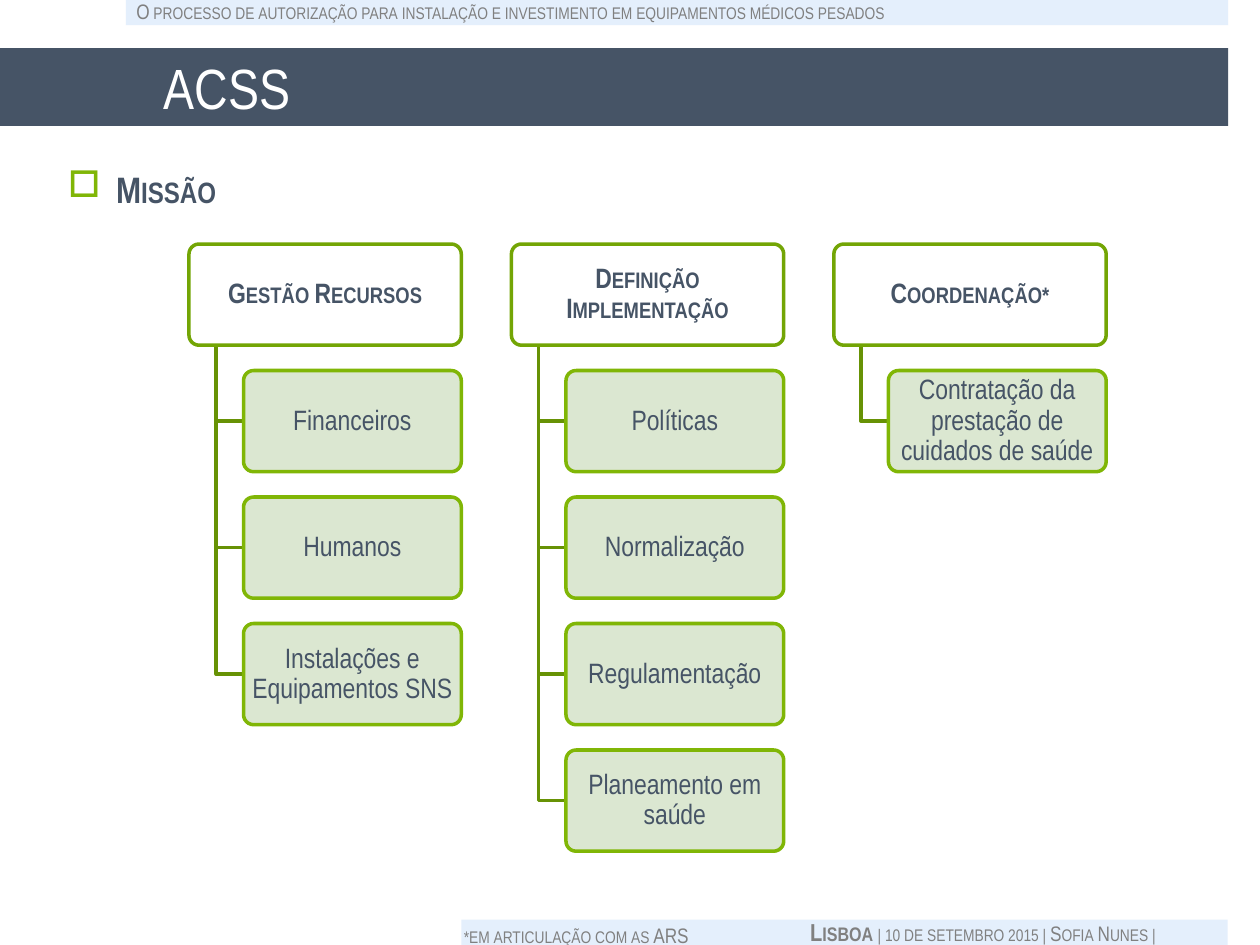
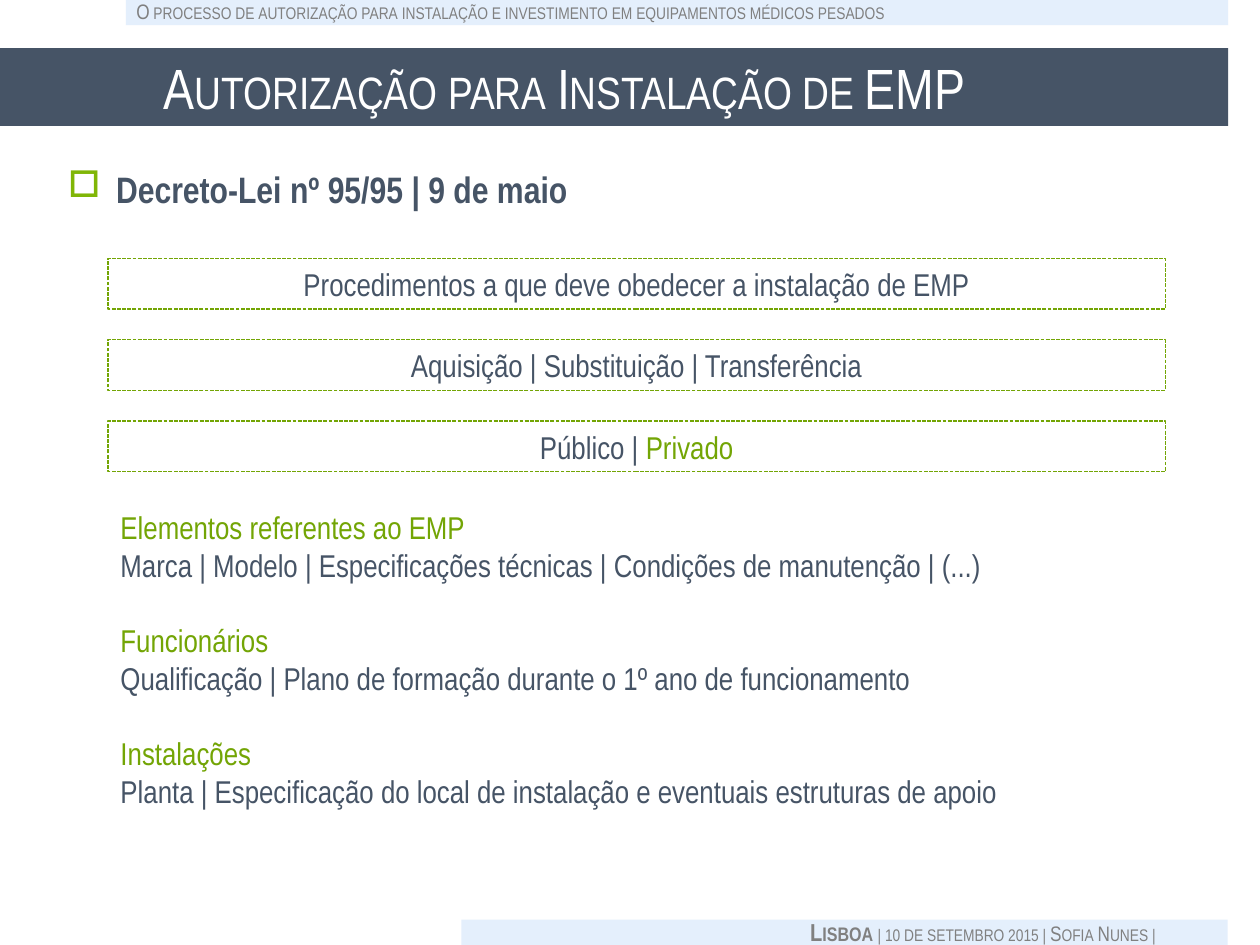
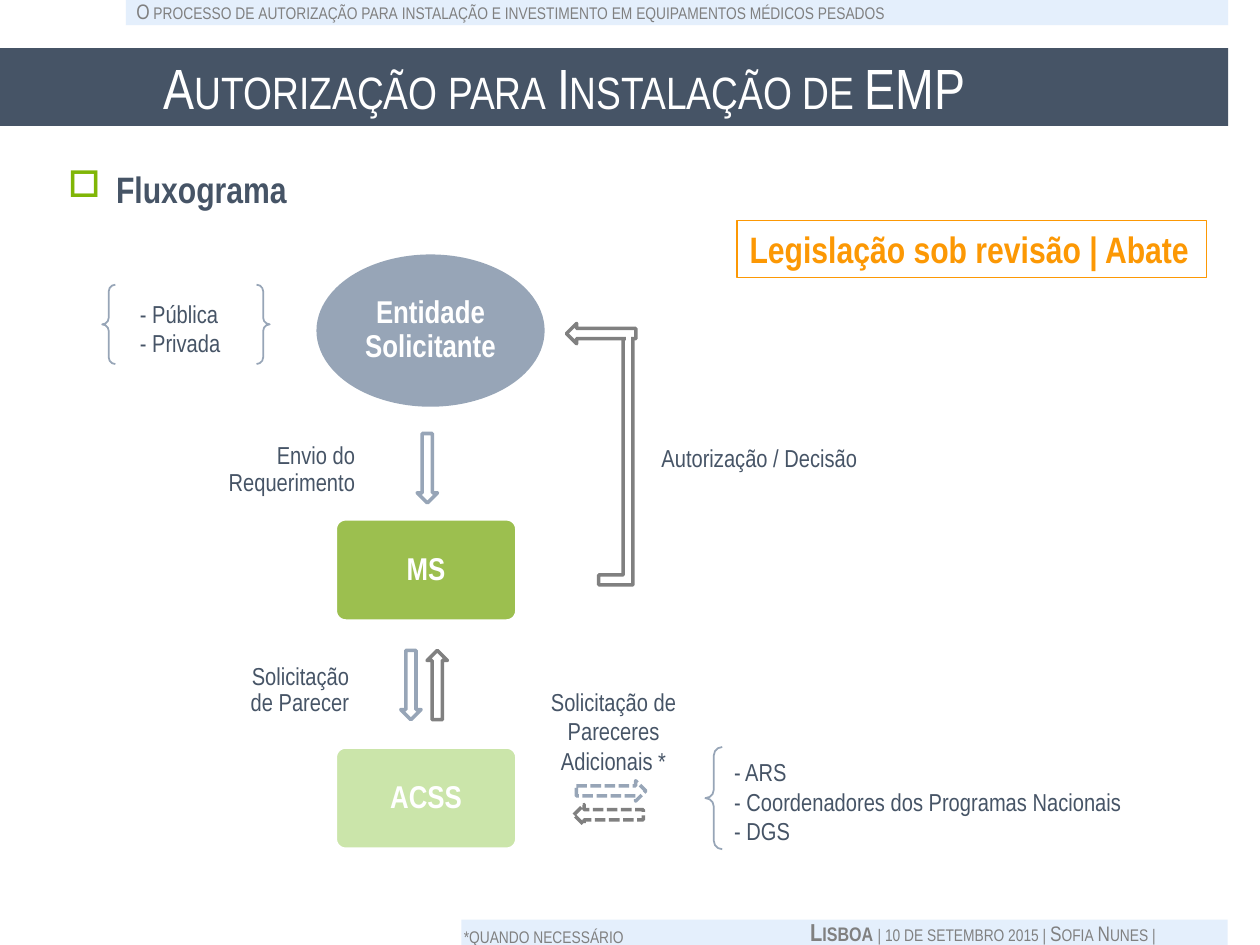
from dataclasses import dataclass

from lxml.etree import SubElement
from pptx import Presentation
from pptx.dml.color import RGBColor
from pptx.enum.dml import MSO_LINE
from pptx.enum.shapes import MSO_CONNECTOR, MSO_SHAPE
from pptx.enum.text import MSO_ANCHOR, PP_ALIGN
from pptx.oxml.ns import qn
from pptx.util import Cm, Pt


@dataclass(frozen=True)
class Theme:
    font: str = "Arial Narrow"
    white: str = "FFFFFF"
    slate: str = "465466"
    gray: str = "808080"
    steel: str = "97A5B7"
    pale_blue: str = "E4EFFC"
    green: str = "73A505"
    bullet_green: str = "80B606"
    trunk_green: str = "679205"
    pale_green: str = "D8E5CC"
    light_green: str = "B6DA86"
    orange: str = "FC9804"
    title: float = 32.4
    heading: float = 21
    body: float = 18
    node: float = 16
    label: float = 14
    note: float = 12


THEME = Theme()
TEXT_INSETS = (0.25, 0.13, 0.25, 0.13)
NODE_INSETS = (0.08, 0.05, 0.08, 0.05)
ARROW_LENGTH, ARROW_WIDTH = 1.4, 0.41


@dataclass(frozen=True)
class Span:
    text: str
    size: float = THEME.label
    color: str = THEME.slate
    bold: bool = False
    small_caps: bool = False


def rgb(color):
    return RGBColor.from_string(color)


def frame(at):
    return [Cm(length) for length in at]


def paint(shape, fill=None, line=None, width=2, alpha=None, dashed=False):
    shape.shadow.inherit = False
    if fill:
        shape.fill.solid()
        shape.fill.fore_color.rgb = rgb(fill)
        if alpha:
            color = shape.fill._xPr.find(qn("a:solidFill"))[0]
            SubElement(color, qn("a:alpha"), val=str(alpha * 1000))
    else:
        shape.fill.background()
    if line:
        shape.line.color.rgb = rgb(line)
        shape.line.width = Pt(width)
        if dashed:
            shape.line.dash_style = MSO_LINE.SQUARE_DOT
    else:
        shape.line.fill.background()


def add_shape(page, kind, at, corner=None, **style):
    shape = page.shapes.add_shape(kind, *frame(at))
    if corner is not None:
        shape.adjustments[0] = corner
    paint(shape, **style)
    return shape


def write(box, paragraphs, align=PP_ALIGN.LEFT, anchor=MSO_ANCHOR.TOP,
          insets=TEXT_INSETS, spacing=None, wrap=True):
    text = box.text_frame
    text.word_wrap = wrap
    text.vertical_anchor = anchor
    text.margin_left, text.margin_top, text.margin_right, text.margin_bottom = frame(insets)
    for index, spans in enumerate(paragraphs):
        para = text.add_paragraph() if index else text.paragraphs[0]
        para.alignment = align
        if spacing:
            para.line_spacing = spacing
        for span in spans:
            run = para.add_run()
            run.text = span.text
            run.font.name = THEME.font
            run.font.size = Pt(span.size)
            run.font.bold = span.bold
            run.font.color.rgb = rgb(span.color)
            if span.small_caps:
                run.font._element.set("cap", "small")
    return text


def add_text(page, at, paragraphs, **layout):
    return write(page.shapes.add_textbox(*frame(at)), paragraphs, **layout)


def add_centered(page, kind, at, spans, corner=None, insets=NODE_INSETS, spacing=0.9, **style):
    shape = add_shape(page, kind, at, corner, **style)
    write(shape, [spans], PP_ALIGN.CENTER, MSO_ANCHOR.MIDDLE, insets, spacing)


def add_heading(page, heading, small_caps=False):
    span = Span(heading, THEME.heading, bold=True, small_caps=small_caps)
    text = add_text(page, (1.12, 3.23, 15.7, 9), [[span]])
    properties = text.paragraphs[0]._p.get_or_add_pPr()
    properties.set("marL", str(Cm(0.97)))
    properties.set("indent", str(-Cm(0.97)))
    color = SubElement(properties, qn("a:buClr"))
    SubElement(color, qn("a:srgbClr"), val=THEME.bullet_green)
    SubElement(properties, qn("a:buChar"), char="□")


def add_footnote(page, note):
    add_text(page, (9.1, 18.47, 8.38, 0.74),
             [[Span(note, THEME.note, THEME.gray, small_caps=True)]])


def add_page(deck, title, heading, small_caps=False):
    page = deck.slides.add_slide(deck.slide_layouts[6])
    for band in ((2.54, 0, 22.22, 0.51), (9.3, 18.54, 15.45, 0.51)):
        add_shape(page, MSO_SHAPE.RECTANGLE, band, fill=THEME.pale_blue)
    add_text(page, (13.72, 18.36, 12.19, 0.86), [[
        Span("Lisboa ", THEME.label, THEME.gray, True, True),
        Span("| 10 de setembro 2015 | Sofia Nunes |", THEME.note, THEME.gray, small_caps=True),
    ]], align=PP_ALIGN.CENTER)
    add_text(page, (2.34, -0.15, 15.9, 0.76), [[
        Span("O processo de autorização para instalação e investimento em "
             "equipamentos médicos pesados", THEME.note, THEME.gray, small_caps=True),
    ]], align=PP_ALIGN.CENTER, wrap=False)
    title_bar = add_shape(page, MSO_SHAPE.RECTANGLE, (0, 0.97, 24.76, 1.57), fill=THEME.slate)
    write(title_bar, [[Span(title, THEME.title, THEME.white, small_caps=True)]],
          anchor=MSO_ANCHOR.MIDDLE, insets=(3.3, 0.13, 0.76, 0.13))
    add_heading(page, heading, small_caps)
    return page


def add_elbow(page, left, top, right, bottom):
    builder = page.shapes.build_freeform(Cm(left), Cm(top), scale=1.0)
    builder.add_line_segments([(Cm(left), Cm(bottom)), (Cm(right), Cm(bottom))], close=False)
    paint(builder.convert_to_shape(), line=THEME.trunk_green)


def add_branch(page, left, head, children):
    top, height, pitch = 4.92, 2.04, 2.55
    child_left = left + 1.1
    for row, child in enumerate(children, start=1):
        child_top = top + row * pitch
        add_elbow(page, left + 0.55, top + height, child_left, child_top + height / 2)
        add_centered(page, MSO_SHAPE.ROUNDED_RECTANGLE, (child_left, child_top, 4.39, height),
                     [Span(child, THEME.node)], 0.1,
                     fill=THEME.pale_green, alpha=90, line=THEME.bullet_green)
    add_centered(page, MSO_SHAPE.ROUNDED_RECTANGLE, (left, top, 5.49, height),
                 [Span(head, THEME.node, bold=True, small_caps=True)], 0.1,
                 fill=THEME.white, line=THEME.green)


def add_arrow(page, kind, left, top, color, dashed=False):
    size = (ARROW_WIDTH, ARROW_LENGTH)
    if kind in (MSO_SHAPE.LEFT_ARROW, MSO_SHAPE.RIGHT_ARROW):
        size = size[::-1]
    add_shape(page, kind, (left, top, *size), fill=THEME.white, line=color, dashed=dashed)


def add_line(page, start, end, color, width):
    line = page.shapes.add_connector(MSO_CONNECTOR.STRAIGHT, *frame(start + end))
    line.line.color.rgb = rgb(color)
    line.line.width = Pt(width)
    SubElement(line._element.spPr, qn("a:effectLst"))


def build_mission(deck):
    page = add_page(deck, "ACSS", "Missão", small_caps=True)
    branches = (
        ("Gestão Recursos", ("Financeiros", "Humanos", "Instalações e Equipamentos SNS")),
        ("Definição Implementação",
         ("Políticas", "Normalização", "Regulamentação", "Planeamento em saúde")),
        ("Coordenação*", ("Contratação da prestação de cuidados de saúde",)),
    )
    for column, (head, children) in enumerate(branches):
        add_branch(page, 3.81 + column * 6.5, head, children)
    add_footnote(page, "*em articulação com as ARS")


def build_decree(deck):
    page = add_page(deck, "Autorização para Instalação de EMP",
                    "Decreto-Lei nº 95/95 | 9 de maio")
    scopes = (
        [Span("Procedimentos a que deve obedecer a instalação de EMP", THEME.body)],
        [Span("Aquisição | Substituição | Transferência", THEME.body)],
        [Span("Público | ", THEME.body), Span("Privado", THEME.body, THEME.green)],
    )
    for row, spans in enumerate(scopes):
        add_centered(page, MSO_SHAPE.RECTANGLE, (2.18, 5.21 + row * 1.64, 21.31, 1.02), spans,
                     insets=TEXT_INSETS, spacing=None,
                     line=THEME.green, width=0.75, dashed=True)
    requirements = (
        ("Elementos referentes ao EMP",
         "Marca | Modelo | Especificações técnicas | Condições de manutenção | (...)"),
        ("Funcionários", "Qualificação | Plano de formação durante o 1º ano de funcionamento"),
        ("Instalações",
         "Planta | Especificação do local de instalação e eventuais estruturas de apoio"),
    )
    paragraphs = []
    for topic, details in requirements:
        paragraphs += [[Span(topic, THEME.body, THEME.green)], [Span(details, THEME.body)]]
    text = add_text(page, (2.18, 10.11, 19.91, 7.19), paragraphs)
    for para in text.paragraphs[2::2]:
        para.space_before = Pt(21.5)


def build_flowchart(deck):
    page = add_page(deck, "Autorização para Instalação de EMP", "Fluxograma")

    add_centered(page, MSO_SHAPE.OVAL, (6.38, 5.13, 4.6, 3.07),
                 [Span("Entidade Solicitante", THEME.body, THEME.white, True)],
                 fill=THEME.steel)
    for name, top, fill in (("MS", 10.46, THEME.green), ("ACSS", 15.06, THEME.light_green)):
        add_centered(page, MSO_SHAPE.ROUNDED_RECTANGLE, (6.76, top, 3.66, 2.06),
                     [Span(name, THEME.body, THEME.white, True)], 0.1,
                     fill=fill, alpha=70, line=THEME.white)

    add_shape(page, MSO_SHAPE.BENT_UP_ARROW, (12.07, 6.58, 0.79, 5.21),
              fill=THEME.white, line=THEME.gray)
    add_shape(page, MSO_SHAPE.RECTANGLE, (12.12, 5.99, 0.91, 0.84),
              fill=THEME.white, line=THEME.white)
    arrows = (
        (MSO_SHAPE.DOWN_ARROW, 8.41, 8.74, THEME.steel, False),
        (MSO_SHAPE.DOWN_ARROW, 8.08, 13.11, THEME.steel, False),
        (MSO_SHAPE.UP_ARROW, 8.61, 13.11, THEME.gray, False),
        (MSO_SHAPE.RIGHT_ARROW, 11.62, 15.74, THEME.steel, True),
        (MSO_SHAPE.LEFT_ARROW, 11.57, 16.22, THEME.gray, True),
        (MSO_SHAPE.LEFT_ARROW, 11.42, 6.52, THEME.gray, False),
    )
    for arrow in arrows:
        add_arrow(page, *arrow)
    add_line(page, (12.67, 6.7), (12.67, 7.11), THEME.white, 3)

    add_shape(page, MSO_SHAPE.DOUBLE_BRACE, (2.06, 5.74, 3.38, 1.6), line=THEME.steel, width=1)
    add_shape(page, MSO_SHAPE.LEFT_BRACE, (14.22, 15.06, 0.34, 2.06), 0.5,
              line=THEME.steel, width=1)

    lists = (
        ((2.57, 5.89, 3.18, 1.45), ("- Pública", "- Privada")),
        ((14.55, 15.14, 9.65, 2.06),
         ("- ARS", "- Coordenadores dos Programas Nacionais", "- DGS")),
    )
    for at, items in lists:
        add_text(page, at, [[Span(item)] for item in items])

    labels = (
        ((3.68, 8.81, 3.73, 1.35), "Envio do Requerimento", PP_ALIGN.RIGHT, 0.9),
        ((4.57, 13.26, 2.72, 1.35), "Solicitação de Parecer", PP_ALIGN.RIGHT, 0.9),
        ((13, 8.81, 4.62, 0.86), "Autorização / Decisão", PP_ALIGN.CENTER, None),
        ((10.34, 13.72, 4.06, 3), "Solicitação de Pareceres Adicionais *",
         PP_ALIGN.CENTER, None),
    )
    for at, label, align, spacing in labels:
        add_text(page, at, [[Span(label)]], align=align, spacing=spacing)

    notice = add_shape(page, MSO_SHAPE.RECTANGLE, (14.86, 4.45, 9.47, 1.14),
                       fill=THEME.white, line=THEME.orange, width=0.75)
    write(notice, [[Span("Legislação sob revisão | Abate", THEME.heading, THEME.orange, True)]],
          anchor=MSO_ANCHOR.MIDDLE, wrap=False)
    add_footnote(page, "*quando necessário")


def main():
    deck = Presentation()
    deck.slide_width, deck.slide_height = Cm(25.4), Cm(19.05)
    build_mission(deck)
    build_decree(deck)
    build_flowchart(deck)
    deck.save("out.pptx")


if __name__ == "__main__":
    main()
